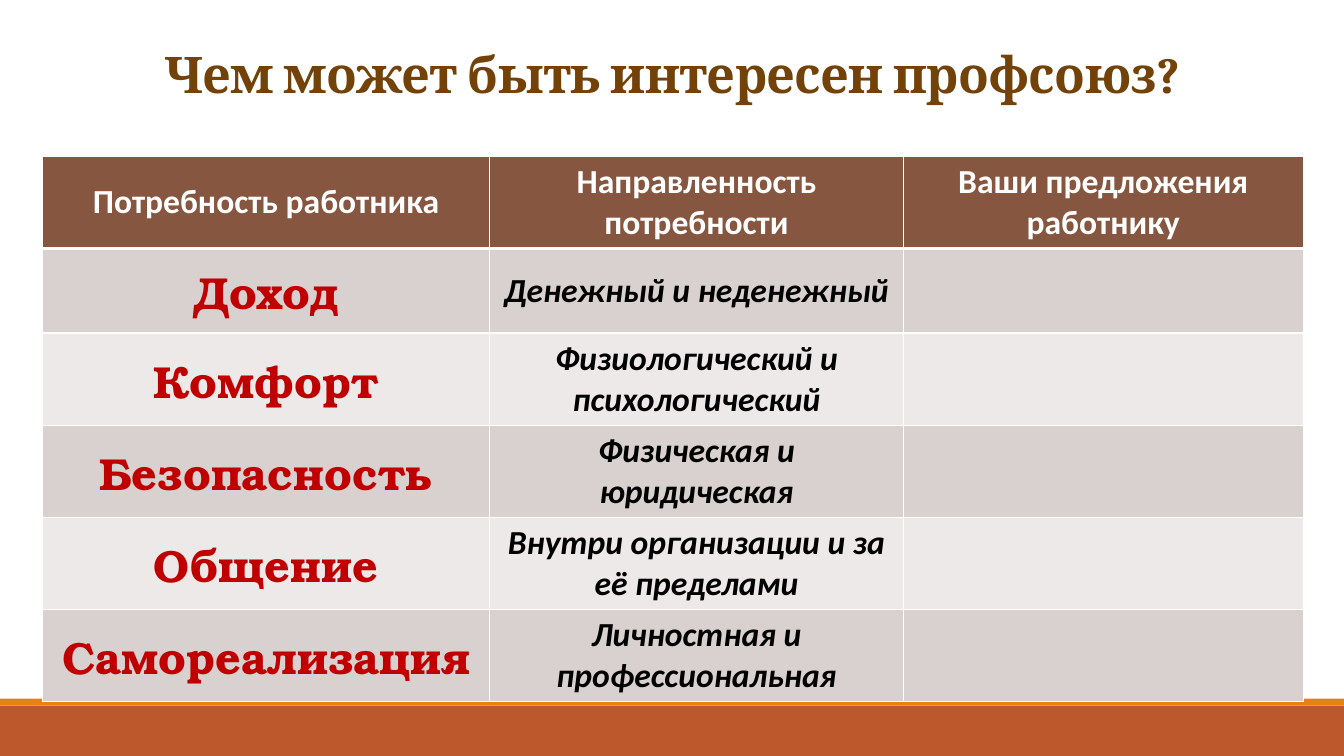
from dataclasses import dataclass

from lxml.etree import SubElement
from pptx import Presentation
from pptx.dml.color import RGBColor
from pptx.enum.shapes import MSO_SHAPE as Shape
from pptx.enum.text import MSO_ANCHOR as Anchor, MSO_AUTO_SIZE as AutoSize, PP_ALIGN as Align
from pptx.oxml.ns import qn
from pptx.util import Inches, Pt

SLIDE_W, SLIDE_H = Inches(13.33), Inches(7.5)


@dataclass(frozen=True)
class Box:
    """Position and size in percent of the slide."""
    x: float
    y: float
    w: float
    h: float

    def emu(self) -> tuple[int, int, int, int]:
        return across(self.x), down(self.y), across(self.w), down(self.h)


@dataclass(frozen=True)
class Band:
    box: Box
    color: str


@dataclass(frozen=True)
class Need:
    name: str
    focus: str


BANDS = [
    Band(Box(0, 93.33, 100, 6.67), "BD582C"),
    Band(Box(0, 92.4, 100, 0.93), "E48312"),
]
TITLE = "Чем может быть интересен профсоюз?"
TITLE_BOX = Box(5.1, 2.8, 89.8, 11.6)
HEADERS = ["Потребность работника", "Направленность потребности", "Ваши предложения работнику"]
NEEDS = [
    Need("Доход", "Денежный и неденежный"),
    Need("Комфорт", "Физиологический и психологический"),
    Need("Безопасность", "Физическая и юридическая"),
    Need("Общение", "Внутри организации и за её пределами"),
    Need("Самореализация", "Личностная и профессиональная"),
]
TABLE_BOX = Box(3.15, 20.67, 93.83, 71.2)
COL_WIDTHS = [33.3, 30.75, 29.78]
ROW_HEIGHTS = [11.6, 11.2, 11.6, 11.6, 11.6, 11.6]
HEADER_FILL, ROW_FILLS = "865640", ["D9D1CF", "EDE9E8"]


def across(percent: float) -> int:
    return round(SLIDE_W * percent / 100)


def down(percent: float) -> int:
    return round(SLIDE_H * percent / 100)


def rgb(color: str) -> RGBColor:
    return RGBColor.from_string(color)


def write(tf, text: str, *, size: float, font: str, color: str,
          italic: bool = False, line_spacing: float = 1.0, tracking: float = 0) -> None:
    p = tf.paragraphs[0]
    p.alignment, p.line_spacing = Align.CENTER, line_spacing
    r = p.add_run()
    r.text = text
    r.font.size, r.font.name = Pt(size), font
    r.font.bold, r.font.italic = True, italic
    r.font.color.rgb = rgb(color)
    if tracking:
        r._r.get_or_add_rPr().set("spc", str(round(tracking * 100)))


def add_band(slide, band: Band) -> None:
    sp = slide.shapes.add_shape(Shape.RECTANGLE, *band.box.emu())
    sp.shadow.inherit = False
    sp.fill.solid()
    sp.fill.fore_color.rgb = rgb(band.color)
    sp.line.fill.background()


def style_cell(cell, fill: str, top: float, bottom: float) -> None:
    cell.vertical_anchor = Anchor.MIDDLE
    tc_pr = cell._tc.get_or_add_tcPr()
    for side, width in {"L": 1, "R": 1, "T": top, "B": bottom}.items():
        ln = SubElement(tc_pr, qn(f"a:ln{side}"), w=str(Pt(width)))
        SubElement(SubElement(ln, qn("a:solidFill")), qn("a:srgbClr"), val="FFFFFF")
    cell.fill.solid()
    cell.fill.fore_color.rgb = rgb(fill)


def add_needs_table(slide) -> None:
    table = slide.shapes.add_table(len(ROW_HEIGHTS), len(COL_WIDTHS), *TABLE_BOX.emu()).table
    for col, width in zip(table.columns, COL_WIDTHS):
        col.width = across(width)
    for i, (row, height) in enumerate(zip(table.rows, ROW_HEIGHTS)):
        row.height = down(height)
        fill = ROW_FILLS[(i - 1) % 2] if i else HEADER_FILL
        for cell in row.cells:
            style_cell(cell, fill, top=3 if i == 1 else 1, bottom=3 if i == 0 else 1)

    # Header row
    for j, header in enumerate(HEADERS):
        write(table.cell(0, j).text_frame, header, size=24, font="Calibri", color="FFFFFF")

    # One row per need; the last column stays open for proposals
    for i, need in enumerate(NEEDS, start=1):
        write(table.cell(i, 0).text_frame, need.name,
              size=32, font="TeX Gyre Bonum", color="C00000")
        write(table.cell(i, 1).text_frame, need.focus,
              size=24, font="Calibri", color="000000", italic=True)


def main() -> None:
    prs = Presentation()
    prs.slide_width, prs.slide_height = SLIDE_W, SLIDE_H
    slide = prs.slides.add_slide(prs.slide_layouts[5])

    # Footer bands
    for band in BANDS:
        add_band(slide, band)

    # Title
    title = slide.shapes.title
    title.left, title.top, title.width, title.height = TITLE_BOX.emu()
    tf = title.text_frame
    tf.auto_size, tf.vertical_anchor = AutoSize.NONE, Anchor.BOTTOM
    write(tf, TITLE, size=36, font="Cambria", color="724209", line_spacing=0.85, tracking=-0.5)

    # Table of needs
    add_needs_table(slide)
    prs.save("out.pptx")


if __name__ == "__main__":
    main()
